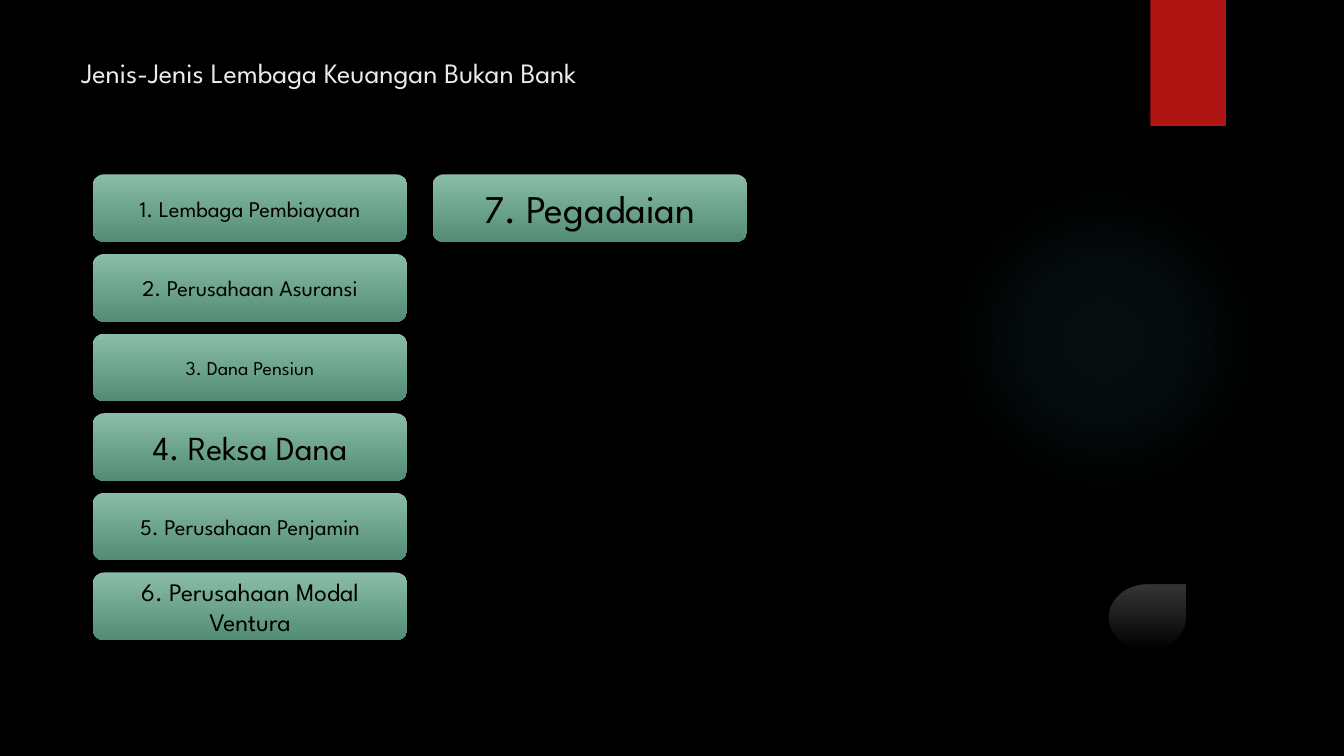
from dataclasses import dataclass

from lxml.etree import SubElement
from pptx import Presentation
from pptx.dml.color import RGBColor as Rgb
from pptx.enum.shapes import MSO_SHAPE as Kind
from pptx.enum.text import MSO_ANCHOR as Anchor, PP_ALIGN as Align
from pptx.oxml.ns import qn
from pptx.util import Inches, Pt


@dataclass(frozen=True)
class Theme:
    font: str = "League Spartan"
    back: str = "000000"
    ink: str = "000000"
    title: str = "EBEBEB"
    red: str = "B01513"
    card: tuple = ((0, "89BDA7", 100), (100, "538C74", 100))
    drop: tuple = ((0, "353535", 100), (100, "000000", 100))
    glow: tuple = ((0, "50B9C1", 7), (36, "50B9C1", 6), (69, "50B9C1", 0))
    head: int = 20


THEME = Theme()

# Label and type size, top to bottom and then left to right
TYPES = [
    ("1. Lembaga Pembiayaan", 16),
    ("2. Perusahaan Asuransi", 16),
    ("3. Dana Pensiun", 14),
    ("4. Reksa Dana", 24),
    ("5. Perusahaan Penjamin", 16),
    ("6. Perusahaan Modal Ventura", 18),
    ("7. Pegadaian", 28),
]
ROWS = 6
LEFT, TOP = 0.92, 1.73
WIDE, HIGH = 3.12, 0.67
STEP_X, STEP_Y = 3.37, 0.79


def shade(shape, stops, round=False):
    """Fill with stops of (percent, colour, opacity), downward or from the centre."""
    shape.fill.background()
    none = shape._element.spPr.find(qn("a:noFill"))
    grad = none.makeelement(qn("a:gradFill"), {"rotWithShape": "1"})
    none.getparent().replace(none, grad)
    items = SubElement(grad, qn("a:gsLst"))
    for pos, color, alpha in stops:
        stop = SubElement(items, qn("a:gs"), pos=str(pos * 1000))
        tint = SubElement(stop, qn("a:srgbClr"), val=color)
        if alpha < 100:
            SubElement(tint, qn("a:alpha"), val=str(alpha * 1000))
    if round:
        way = SubElement(grad, qn("a:path"), path="circle")
        SubElement(way, qn("a:fillToRect"), l="50000", t="50000", r="50000", b="50000")
    else:
        SubElement(grad, qn("a:lin"), ang="5400000", scaled="0")


def add_form(slide, kind, x, y, w, h):
    shape = slide.shapes.add_shape(kind, Inches(x), Inches(y), Inches(w), Inches(h))
    shape.shadow.inherit = False
    shape.line.fill.background()
    return shape


def write(shape, text, size, color, align=Align.LEFT, anchor=Anchor.TOP):
    frame = shape.text_frame
    frame.word_wrap = True
    frame.vertical_anchor = anchor
    para = frame.paragraphs[0]
    para.alignment = align
    run = para.add_run()
    run.text = text
    run.font.name = THEME.font
    run.font.size = Pt(size)
    run.font.color.rgb = Rgb.from_string(color)


def add_card(slide, x, y, text, size):
    card = add_form(slide, Kind.ROUNDED_RECTANGLE, x, y, WIDE, HIGH)
    shade(card, THEME.card)
    write(card, text, size, THEME.ink, align=Align.CENTER, anchor=Anchor.MIDDLE)


def main():
    deck = Presentation()
    deck.slide_width, deck.slide_height = Inches(13.33), Inches(7.5)
    slide = deck.slides.add_slide(deck.slide_layouts[6])
    back = slide.background.fill
    back.solid()
    back.fore_color.rgb = Rgb.from_string(THEME.back)

    glow = add_form(slide, Kind.OVAL, 9.41, 1.83, 3.08, 3.08)
    shade(glow, THEME.glow, round=True)
    flag = add_form(slide, Kind.RECTANGLE, 11.41, 0, 0.75, 1.25)
    flag.fill.solid()
    flag.fill.fore_color.rgb = Rgb.from_string(THEME.red)

    title = slide.shapes.add_textbox(Inches(0.71), Inches(0.5), Inches(10.29), Inches(1.53))
    write(title, "Jenis-Jenis Lembaga Keuangan Bukan Bank", THEME.head, THEME.title)

    for i, (text, size) in enumerate(TYPES):
        col, row = divmod(i, ROWS)
        add_card(slide, LEFT + col * STEP_X, TOP + row * STEP_Y, text, size)

    drop = add_form(slide, Kind.TEAR, 10.99, 5.79, 0.78, 0.67)
    shade(drop, THEME.drop)
    drop.line.color.rgb = Rgb.from_string(THEME.back)
    drop.line.width = Pt(0.75)

    deck.save("out.pptx")


if __name__ == "__main__":
    main()
